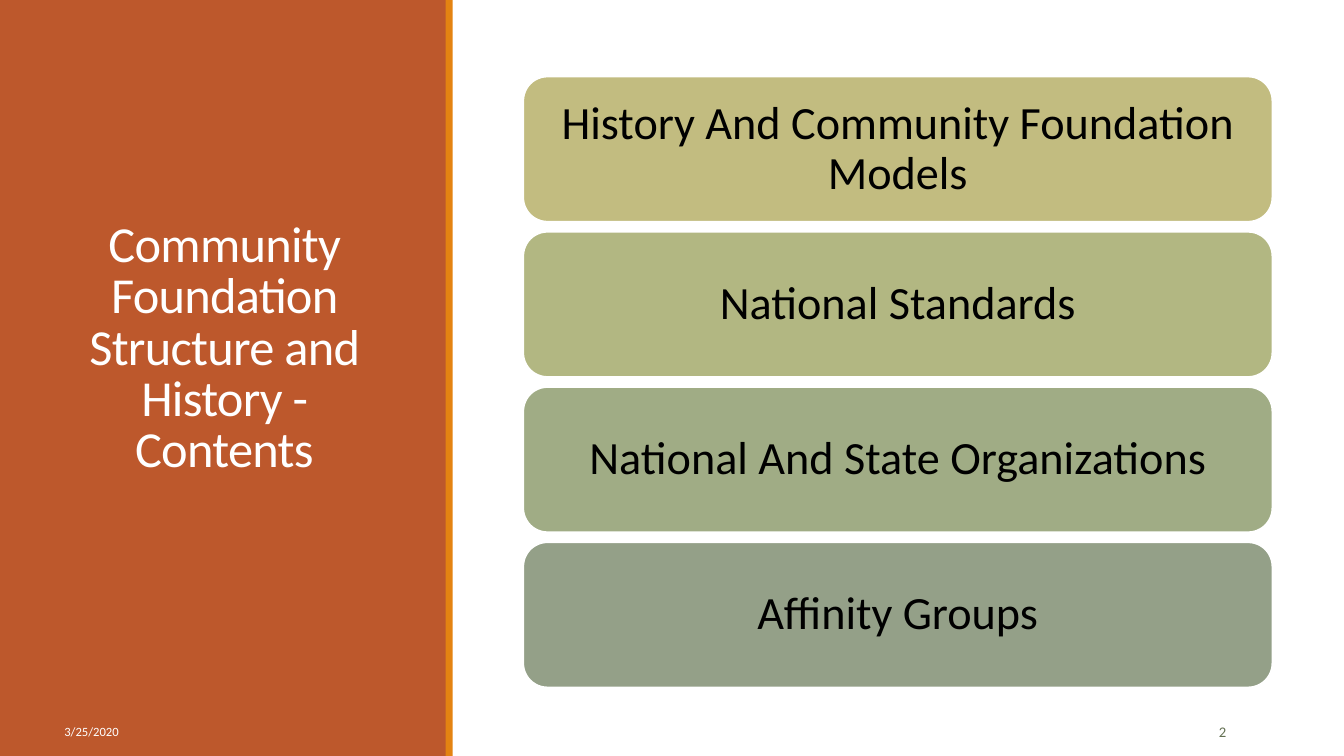
from pptx import Presentation
from pptx.dml.color import RGBColor
from pptx.enum.shapes import MSO_SHAPE as SHAPE
from pptx.enum.text import MSO_ANCHOR as ANCHOR, PP_ALIGN as ALIGN
from pptx.util import Inches, Pt

WHITE = RGBColor(0xFF, 0xFF, 0xFF)
BLACK = RGBColor(0x00, 0x00, 0x00)
RUST = RGBColor(0xBD, 0x58, 0x2C)
ORANGE = RGBColor(0xE4, 0x83, 0x12)
OLIVE = RGBColor(0x63, 0x70, 0x52)

CONTENTS = [
    ("History And Community Foundation Models", RGBColor(0xC2, 0xBC, 0x80)),
    ("National Standards", RGBColor(0xB2, 0xB7, 0x82)),
    ("National And State Organizations", RGBColor(0xA0, 0xAC, 0x85)),
    ("Affinity Groups", RGBColor(0x94, 0xA0, 0x88)),
]


def add_block(slide, kind, x, y, w, h, fill):
    sp = slide.shapes.add_shape(kind, Inches(x), Inches(y), Inches(w), Inches(h))
    sp.shadow.inherit = False
    sp.fill.solid()
    sp.fill.fore_color.rgb = fill
    sp.line.fill.background()
    return sp


def write(sp, text, size, color, align):
    tf = sp.text_frame
    tf.word_wrap = True
    tf.vertical_anchor = ANCHOR.MIDDLE
    p = tf.paragraphs[0]
    p.text = text
    p.alignment = align
    p.font.name = "Calibri"
    p.font.size = Pt(size)
    p.font.color.rgb = color
    return p


def add_title_panel(slide, x, y, w, h):
    add_block(slide, SHAPE.RECTANGLE, x, y, w, h, RUST)
    add_block(slide, SHAPE.RECTANGLE, x + w - 0.01, y, 0.07, h, ORANGE)

    # Title, raised above the panel and set half a line high
    title = slide.shapes.title
    slide.shapes._spTree.append(title._element)
    title.left, title.top = Inches(x + 0.54), Inches(y + 0.57)
    title.width, title.height = Inches(w - 1.06), Inches(h - 1.19)
    p = write(title, "Community Foundation Structure and History - Contents",
              36, WHITE, ALIGN.CENTER)
    p.line_spacing = 0.85
    p.runs[0]._r.get_or_add_rPr().set("spc", "-50")
    title.text_frame.margin_bottom = Inches(0.56)


def add_cards(slide, x, y, w, h, gap=0.1):
    card_h = (h - gap * (len(CONTENTS) - 1)) / len(CONTENTS)
    for i, (text, fill) in enumerate(CONTENTS):
        card = add_block(slide, SHAPE.ROUNDED_RECTANGLE,
                         x, y + i * (card_h + gap), w, card_h, fill)
        card.line.color.rgb = WHITE
        card.line.width = Pt(1.25)
        p = write(card, text, 33, BLACK, ALIGN.CENTER)
        p.line_spacing = 0.9
        tf = card.text_frame
        tf.margin_left = tf.margin_right = Inches(0.14)
        tf.margin_top = tf.margin_bottom = Inches(0.14)


def add_footer(slide, y, h):
    for x, w, text, size, color, align in [
        (0.54, 1.9, "3/25/2020", 9, WHITE, ALIGN.LEFT),
        (11.07, 1.19, "2", 10.5, OLIVE, ALIGN.RIGHT),
    ]:
        box = slide.shapes.add_textbox(Inches(x), Inches(y), Inches(w), Inches(h))
        write(box, text, size, color, align)


def main():
    prs = Presentation()
    prs.slide_width, prs.slide_height = Inches(13.33), Inches(7.5)
    slide = prs.slides.add_slide(prs.slide_layouts[5])
    add_title_panel(slide, 0, 0, 4.43, 7.5)
    add_cards(slide, 5.19, 0.76, 7.43, 6.06)
    add_footer(slide, 7.06, 0.4)
    prs.save("out.pptx")


if __name__ == "__main__":
    main()
